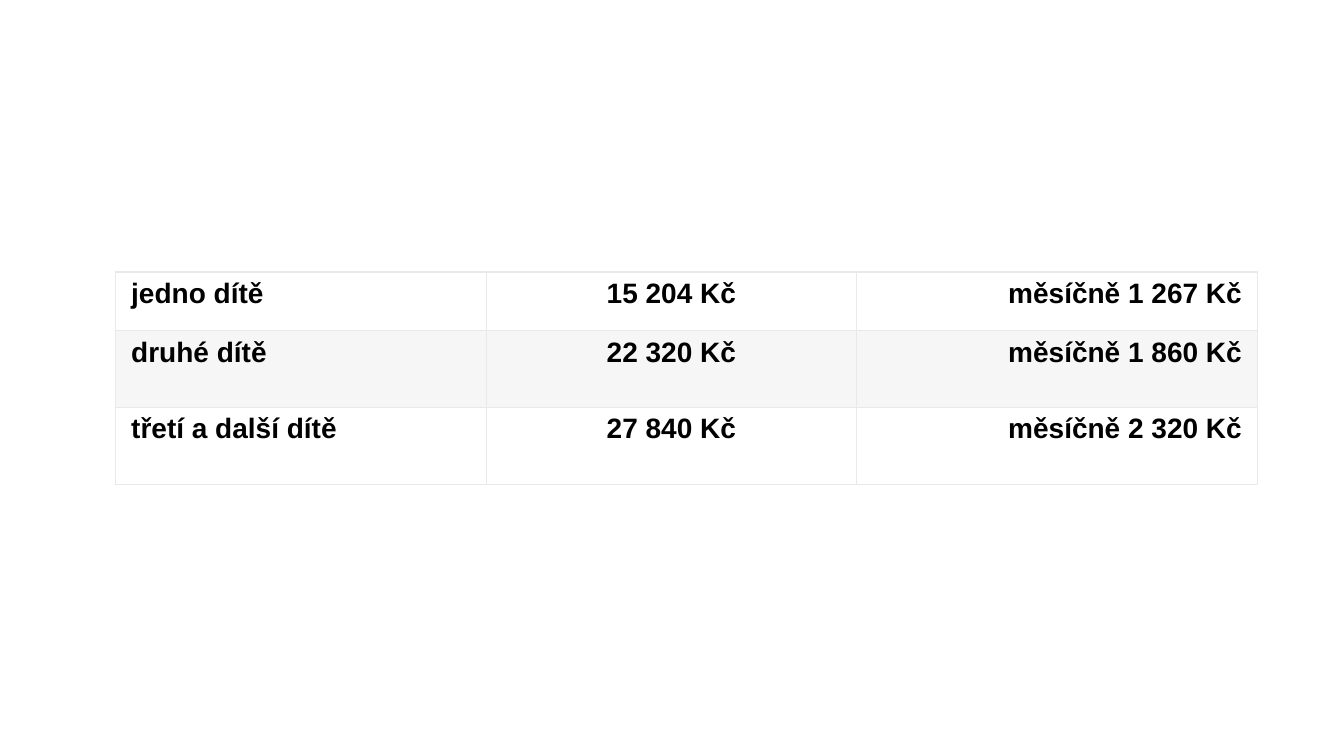
from lxml import etree
from pptx import Presentation
from pptx.dml.color import RGBColor
from pptx.enum.text import PP_ALIGN
from pptx.oxml.ns import qn
from pptx.util import Pt

LEFT, CENTER, RIGHT = PP_ALIGN.LEFT, PP_ALIGN.CENTER, PP_ALIGN.RIGHT
BLACK = RGBColor(0x00, 0x00, 0x00)
WHITE = RGBColor(0xFF, 0xFF, 0xFF)
BAND_GRAY = RGBColor(0xF6, 0xF6, 0xF6)
BORDER_GRAY = RGBColor(0xE9, 0xE9, 0xE9)

EMU_PER_PX = 9525
SLIDE_SIZE = (1280, 720)
BLANK_LAYOUT = 6

CHILD_BENEFITS = [
    ("jedno dítě", "15 204 Kč", "měsíčně 1 267 Kč"),
    ("druhé dítě", "22 320 Kč", "měsíčně 1 860 Kč"),
    ("třetí a další dítě", "27 840 Kč", "měsíčně 2 320 Kč"),
]


def px(length):
    return length * EMU_PER_PX


class SlideBuilder:
    font_format = {"name": "Arial", "size": Pt(20), "bold": True}
    cell_format = {
        "margin_left": px(15), "margin_right": px(15),
        "margin_top": px(6), "margin_bottom": px(6),
    }
    alignments = (LEFT, CENTER, RIGHT)
    row_fills = (WHITE, BAND_GRAY)

    def __init__(self, slide):
        self.slide = slide

    def add_borders(self, cell, bottom_width):
        properties = cell._tc.get_or_add_tcPr()
        widths = {"a:lnL": 1, "a:lnR": 1, "a:lnT": 1, "a:lnB": bottom_width}
        for position, (tag, width) in enumerate(widths.items()):
            line = etree.Element(qn(tag), w=str(Pt(width)))
            fill = etree.SubElement(line, qn("a:solidFill"))
            etree.SubElement(fill, qn("a:srgbClr"), val=str(BORDER_GRAY))
            properties.insert(position, line)

    def format_cell(self, cell, text, alignment, fill_color):
        for name, value in self.cell_format.items():
            setattr(cell, name, value)
        cell.fill.solid()
        cell.fill.fore_color.rgb = fill_color
        paragraph = cell.text_frame.paragraphs[0]
        paragraph.alignment = alignment
        run = paragraph.add_run()
        run.text = text
        for name, value in self.font_format.items():
            setattr(run.font, name, value)
        run.font.color.rgb = BLACK

    def add_table(self, left, top, column_widths, row_heights, rows):
        shape = self.slide.shapes.add_table(
            len(rows), len(column_widths), px(left), px(top),
            px(sum(column_widths)), px(sum(row_heights)))
        table = shape.table
        table.first_row = False
        table.horz_banding = False
        for column, width in zip(table.columns, column_widths):
            column.width = px(width)
        for index, (row, height, texts) in enumerate(
                zip(table.rows, row_heights, rows)):
            row.height = px(height)
            fill_color = self.row_fills[index % len(self.row_fills)]
            bottom_width = 0.75 if index == len(rows) - 1 else 1
            for cell, text, alignment in zip(row.cells, texts, self.alignments):
                self.format_cell(cell, text, alignment, fill_color)
                self.add_borders(cell, bottom_width)


def main():
    presentation = Presentation()
    presentation.slide_width, presentation.slide_height = map(px, SLIDE_SIZE)
    slide = presentation.slides.add_slide(
        presentation.slide_layouts[BLANK_LAYOUT])

    # Benefit for each child, per year and per month
    builder = SlideBuilder(slide)
    builder.add_table(110, 259, (353, 353, 382), (56, 73, 73), CHILD_BENEFITS)

    presentation.save("out.pptx")


if __name__ == "__main__":
    main()
